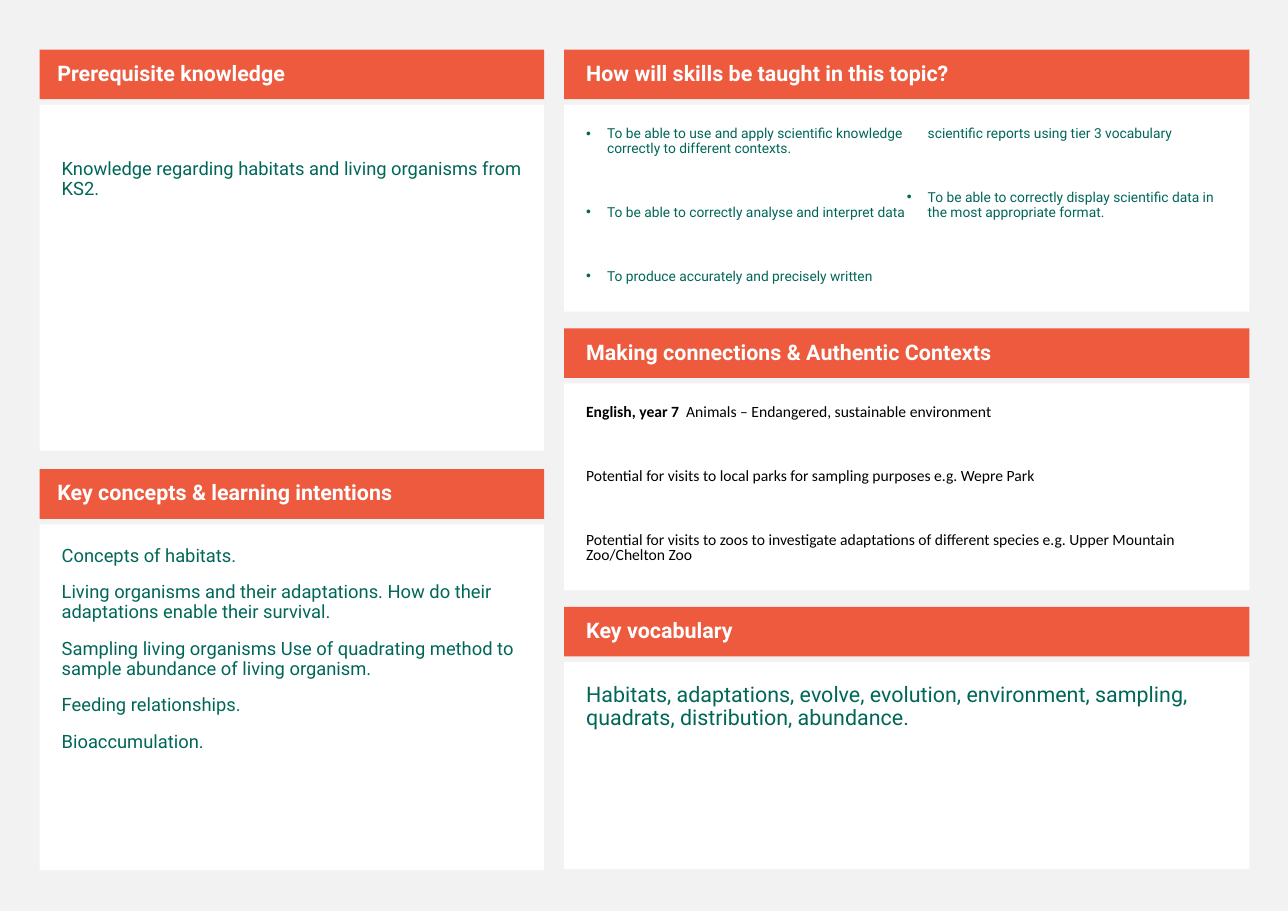
from dataclasses import dataclass

from lxml import etree
from pptx import Presentation
from pptx.dml.color import RGBColor
from pptx.enum import shapes, text
from pptx.oxml import ns
from pptx.util import Inches, Pt


@dataclass(frozen=True)
class Theme:
    page: RGBColor = RGBColor(0xF2, 0xF2, 0xF2)
    panel: RGBColor = RGBColor(0xFF, 0xFF, 0xFF)
    accent: RGBColor = RGBColor(0xED, 0x5A, 0x3E)
    green: RGBColor = RGBColor(0x00, 0x67, 0x58)
    black: RGBColor = RGBColor(0x00, 0x00, 0x00)
    font: str = "Roboto"
    plain_font: str = "Calibri"
    heading: float = 14
    vocabulary: float = 14
    body: float = 12
    connections: float = 10.2
    skills: float = 9


@dataclass(frozen=True)
class Column:
    left: float
    width: float
    step: float
    body_height: float
    heading_inset: float


LEFT = Column(0.36, 4.58, 3.81, 3.14, 0.16)
RIGHT = Column(5.12, 6.22, 2.53, 1.88, 0.2)
TOP = 0.45
HEADING_HEIGHT = 0.45
BODY_OFFSET = 0.5


class TopicPage:
    def __init__(self, deck, theme):
        self.theme = theme
        self.slide = deck.slides.add_slide(deck.slide_layouts.get_by_name("Comparison"))
        self.slide.background.fill.solid()
        self.slide.background.fill.fore_color.rgb = theme.page
        self.title = self.slide.shapes.title
        self.bodies = [box for box in self.slide.placeholders if box != self.title]

    def place(self, box, column, top, height, fill, insets):
        """Use the given placeholder, or a new rectangle when there is none."""
        area = [Inches(n) for n in (column.left, top, column.width, height)]
        if box is None:
            box = self.slide.shapes.add_shape(shapes.MSO_SHAPE.RECTANGLE, *area)
            box.shadow.inherit = False
        box.left, box.top, box.width, box.height = area
        box.fill.solid()
        box.fill.fore_color.rgb = fill
        box.line.fill.background()
        frame = box.text_frame
        frame.word_wrap = True
        frame.auto_size = text.MSO_AUTO_SIZE.NONE
        (frame.margin_left, frame.margin_top,
         frame.margin_right, frame.margin_bottom) = [Inches(n) for n in insets]
        return frame

    def set_words(self, para, words, size, color, font, bold=False,
                  before=0, line=0.9, bullet=False):
        """Fill the paragraph; a pair of texts gets a bold lead."""
        parts = (words,) if isinstance(words, str) else words
        for part in parts:
            para.add_run().text = part
        if len(parts) > 1:
            para.runs[0].font.bold = True
        para.alignment = text.PP_ALIGN.LEFT
        para.line_spacing = line
        para.space_before = Pt(before)
        props = para._p.get_or_add_pPr()
        indent = Inches(0.19) if bullet else 0
        props.set("marL", str(indent))
        props.set("indent", str(-indent))
        if bullet:
            etree.SubElement(props, ns.qn("a:buChar"), char="•")
        else:
            etree.SubElement(props, ns.qn("a:buNone"))
        para.font.name = font
        para.font.size = Pt(size)
        para.font.bold = bold
        para.font.color.rgb = color

    def heading(self, column, row, words):
        box, self.title = self.title, None
        frame = self.place(box, column, TOP + row * column.step, HEADING_HEIGHT,
                           self.theme.accent, (column.heading_inset, 0.05, 0.1, 0.05))
        frame.vertical_anchor = text.MSO_ANCHOR.MIDDLE
        self.set_words(frame.paragraphs[0], words, self.theme.heading,
                       self.theme.panel, self.theme.font, bold=True)

    def body(self, column, row, items, size, color=None, font=None,
             top_inset=0.2, columns=1, **style):
        box = self.bodies.pop(0) if self.bodies else None
        frame = self.place(box, column, TOP + BODY_OFFSET + row * column.step,
                           column.body_height, self.theme.panel,
                           (0.2, top_inset, 0.2, 0.2))
        frame.vertical_anchor = text.MSO_ANCHOR.TOP
        if columns > 1:
            frame._txBody.bodyPr.set("numCol", str(columns))
        for number, item in enumerate(items):
            para = frame.add_paragraph() if number else frame.paragraphs[0]
            self.set_words(para, item, size, color or self.theme.green,
                           font or self.theme.font, **style)

    def panel(self, column, row, title, items, size, **style):
        self.heading(column, row, title)
        self.body(column, row, items, size, **style)


def main():
    deck = Presentation()
    deck.slide_width, deck.slide_height = Inches(11.69), Inches(8.27)
    theme = Theme()
    page = TopicPage(deck, theme)

    page.panel(LEFT, 0, "Prerequisite knowledge", [
        "Knowledge regarding habitats and living organisms from KS2.",
    ], theme.body, top_inset=0.5)
    page.panel(LEFT, 1, "Key concepts & learning intentions", [
        "Concepts of habitats.",
        "Living organisms and their adaptations. How do their adaptations "
        "enable their survival.",
        "Sampling living organisms Use of quadrating method to sample "
        "abundance of living organism.",
        "Feeding relationships.",
        "Bioaccumulation.",
    ], theme.body, before=11)
    page.panel(RIGHT, 0, "How will skills be taught in this topic?", [
        "To be able to use and apply scientific knowledge correctly to "
        "different contexts.",
        "To be able to correctly analyse and interpret data",
        "To produce accurately and precisely written scientific reports "
        "using tier 3 vocabulary",
        "To be able to correctly display scientific data in the most "
        "appropriate format.",
    ], theme.skills, columns=2, before=32, bullet=True)
    page.panel(RIGHT, 1, "Making connections & Authentic Contexts", [
        ("English, year 7", "  Animals – Endangered, sustainable environment"),
        "Potential for visits to local parks for sampling purposes e.g. Wepre Park",
        "Potential for visits to zoos to investigate adaptations of different "
        "species e.g. Upper Mountain Zoo/Chelton Zoo",
    ], theme.connections, color=theme.black, font=theme.plain_font,
        before=32, line=0.8)
    page.panel(RIGHT, 2, "Key vocabulary", [
        "Habitats, adaptations, evolve, evolution, environment, sampling, "
        "quadrats, distribution, abundance.",
    ], theme.vocabulary)

    deck.save("out.pptx")


if __name__ == "__main__":
    main()
